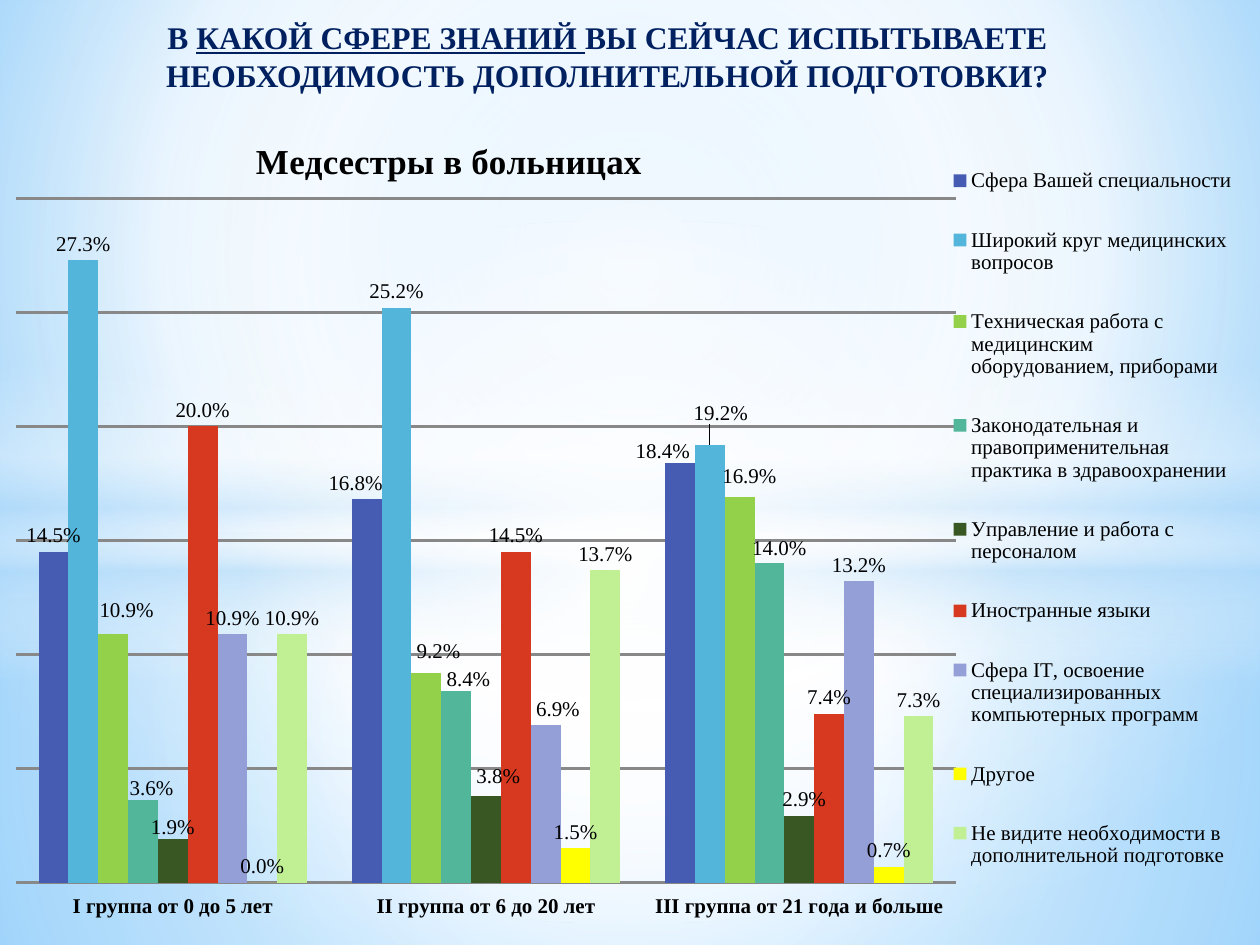
from dataclasses import dataclass, field

from lxml.etree import SubElement
from pptx import Presentation
from pptx.chart.data import CategoryChartData
from pptx.dml.color import RGBColor
from pptx.enum.chart import XL_CHART_TYPE as ChartType
from pptx.enum.chart import XL_LABEL_POSITION as LabelPos
from pptx.enum.chart import XL_LEGEND_POSITION as LegendPos
from pptx.enum.chart import XL_TICK_LABEL_POSITION as TickLabels
from pptx.enum.chart import XL_TICK_MARK as TickMark
from pptx.enum.shapes import MSO_SHAPE as Preset
from pptx.enum.text import MSO_ANCHOR as Anchor
from pptx.enum.text import MSO_AUTO_SIZE as AutoSize
from pptx.enum.text import PP_ALIGN as Align
from pptx.oxml import parse_xml
from pptx.oxml.ns import nsdecls, qn
from pptx.util import Cm, Pt

FONT = "Times New Roman"
PERCENT = "0.0%"
BLACK = RGBColor(0x00, 0x00, 0x00)
NAVY = RGBColor(0x00, 0x20, 0x60)
GRAY = RGBColor(0x88, 0x88, 0x88)
WHITE = RGBColor(0xFF, 0xFF, 0xFF)
PALE_BLUE = RGBColor(0xB4, 0xDC, 0xFA)
SKY = RGBColor(0x9E, 0xD5, 0xFF)
AZURE = RGBColor(0x5B, 0xB9, 0xFF)
INDIGO = RGBColor(0x45, 0x5C, 0xB2)
CYAN = RGBColor(0x52, 0xB5, 0xD9)
LIME = RGBColor(0x94, 0xD1, 0x4A)
TEAL = RGBColor(0x52, 0xB6, 0x9A)
FOREST = RGBColor(0x38, 0x57, 0x23)
RED = RGBColor(0xD7, 0x39, 0x20)
LAVENDER = RGBColor(0x94, 0x9E, 0xD7)
YELLOW = RGBColor(0xFF, 0xFF, 0x00)
LIGHT_LIME = RGBColor(0xC1, 0xF0, 0x94)


@dataclass
class Gradient:
    stops: list  # position %, colour, opacity %
    focus: tuple = (50, 50, 50, 50)  # left, top, right, bottom %
    linear: bool = False


@dataclass
class Glow:
    preset: Preset
    top: float
    height: float
    gradient: Gradient


@dataclass
class Field:
    name: str
    values: tuple
    color: RGBColor
    # category index -> label shift, in hundredths of the chart's size
    shifts: dict = field(default_factory=dict)


BACKDROP = Gradient([(0, SKY, 100), (60, WHITE, 100), (100, AZURE, 100)], (20, 10, 20, 60))
GLOWS = [
    Glow(Preset.RECTANGLE, 10.74, 8.31,
         Gradient([(0, WHITE, 91), (37, WHITE, 76), (100, PALE_BLUE, 79)])),
    Glow(Preset.RECTANGLE, 0, 10.74,
         Gradient([(0, WHITE, 89), (48, WHITE, 62), (100, PALE_BLUE, 79)])),
    Glow(Preset.RECTANGLE, 7.37, 6.35,
         Gradient([(0, WHITE, 0), (29, WHITE, 30), (45, PALE_BLUE, 40),
                   (55, WHITE, 26), (65, PALE_BLUE, 60), (100, WHITE, 0)], linear=True)),
    Glow(Preset.OVAL, 4.45, 14.17, Gradient([(0, WHITE, 100), (54, WHITE, 0)])),
]
GROUPS = ["I группа от 0 до 5 лет", "II группа от 6 до 20 лет",
          "III группа от 21 года и больше"]
FIELDS = [
    Field("Сфера Вашей специальности", (0.145, 0.168, 0.184), INDIGO,
          {1: (-0.9, 0), 2: (-1.4, 0.5)}),
    Field("Широкий круг медицинских вопросов", (0.273, 0.252, 0.192), CYAN,
          {2: (0.9, -1.9)}),
    Field("Техническая работа с медицинским оборудованием, приборами",
          (0.109, 0.092, 0.169), LIME, {0: (1.1, -0.9), 1: (1, -0.7), 2: (0.8, -0.6)}),
    Field("Законодательная и правоприменительная практика в здравоохранении",
          (0.036, 0.084, 0.14), TEAL, {0: (0.7, 0.5), 1: (1, 0.5), 2: (0.8, 0.2)}),
    Field("Управление и работа с персоналом", (0.019, 0.038, 0.029), FOREST,
          {0: (0, 0.5), 1: (1, -0.4), 2: (0.4, -0.1)}),
    Field("Иностранные языки", (0.2, 0.145, 0.074), RED),
    Field("Сфера IT, освоение специализированных компьютерных программ",
          (0.109, 0.069, 0.132), LAVENDER, {1: (1, 0)}),
    Field("Другое", (0, 0.015, 0.007), YELLOW),
    Field("Не видите необходимости в дополнительной подготовке",
          (0.109, 0.137, 0.073), LIGHT_LIME),
]
QUESTION = [("В ", False), ("КАКОЙ СФЕРЕ ЗНАНИЙ ", True),
            ("ВЫ СЕЙЧАС ИСПЫТЫВАЕТЕ НЕОБХОДИМОСТЬ ДОПОЛНИТЕЛЬНОЙ ПОДГОТОВКИ?", False)]


def apply(target, formats: dict) -> None:
    for name, value in formats.items():
        setattr(target, name, value)


def set_font(font, size: int, color: RGBColor, bold: bool) -> None:
    apply(font, {"name": FONT, "size": Pt(size), "bold": bold})
    font.color.rgb = color


def paint_gradient(fill, owner, gradient: Gradient) -> None:
    fill.gradient()
    stops = "".join(
        f'<a:gs pos="{pos * 1000}"><a:srgbClr val="{color}">'
        f'<a:alpha val="{opacity * 1000}"/></a:srgbClr></a:gs>'
        for pos, color, opacity in gradient.stops)
    sides = " ".join(f'{side}="{share * 1000}"' for side, share in zip("ltrb", gradient.focus))
    course = ('<a:lin ang="5400000" scaled="0"/>' if gradient.linear else
              f'<a:path path="circle"><a:fillToRect {sides}/></a:path>')
    plain = owner.xpath(".//a:gradFill")[0]
    plain.getparent().replace(plain, parse_xml(
        f'<a:gradFill {nsdecls("a")} rotWithShape="1"><a:gsLst>{stops}</a:gsLst>'
        f'{course}</a:gradFill>'))


def add_glow(slide, glow: Glow) -> None:
    shape = slide.shapes.add_shape(glow.preset, 0, Cm(glow.top), Cm(25.4), Cm(glow.height))
    shape.shadow.inherit = False
    shape.line.fill.background()
    paint_gradient(shape.fill, shape._element, glow.gradient)


def set_layout(part, index: int, **settings) -> None:
    """Give a chart part a manual layout as its child at the given index."""
    for old in part.findall(qn("c:layout")):
        part.remove(old)
    layout = parse_xml(f'<c:layout {nsdecls("c")}><c:manualLayout/></c:layout>')
    for name, value in settings.items():
        SubElement(layout[0], qn(f"c:{name}")).set("val", str(value))
    part.insert(index, layout)


def format_series(series, item: Field) -> None:
    series.format.fill.solid()
    series.format.fill.fore_color.rgb = item.color
    series.invert_if_negative = False
    apply(series.data_labels, {"show_value": True, "number_format": PERCENT,
                               "number_format_is_linked": False,
                               "position": LabelPos.OUTSIDE_END})
    for index, (dx, dy) in item.shifts.items():
        series.points[index].data_label.position = LabelPos.OUTSIDE_END
        label = series._element.xpath(f'.//c:dLbl[c:idx/@val="{index}"]')[0]
        set_layout(label, 1, x=round(dx / 100, 3), y=round(dy / 100, 3))


def add_survey_chart(slide) -> None:
    data = CategoryChartData(number_format=PERCENT)
    data.categories = GROUPS
    for item in FIELDS:
        data.add_series(item.name, item.values)
    chart = slide.shapes.add_chart(ChartType.COLUMN_CLUSTERED, Cm(0.3), Cm(2.18),
                                   Cm(24.79), Cm(16.54), data).chart
    set_font(chart.font, 12, BLACK, False)

    # Title
    heading = chart.chart_title.text_frame
    heading.text = "Медсестры в больницах"
    set_font(heading.paragraphs[0].runs[0].font, 20, BLACK, True)
    set_layout(chart.chart_title._element, 1, xMode="edge", yMode="edge", x=0.19, y=0.03)

    # Columns
    plot = chart.plots[0]
    apply(plot, {"gap_width": 150, "overlap": 0, "vary_by_categories": False})
    for series, item in zip(plot.series, FIELDS):
        format_series(series, item)
    set_layout(chart._chartSpace.chart.plotArea, 0, layoutTarget="inner", xMode="edge",
               yMode="edge", x=0, y=0.11, w=0.765, h=0.834)

    # Axes
    apply(chart.value_axis, {"minimum_scale": 0, "maximum_scale": 0.3, "major_unit": 0.05,
                             "has_major_gridlines": True, "visible": False})
    groups_axis = chart.category_axis
    apply(groups_axis, {"major_tick_mark": TickMark.NONE, "minor_tick_mark": TickMark.NONE,
                        "tick_label_position": TickLabels.LOW})
    set_font(groups_axis.tick_labels.font, 12, BLACK, True)
    for line, width in ((chart.value_axis.major_gridlines.format.line, 1.5),
                        (groups_axis.format.line, 0.75)):
        line.color.rgb = GRAY
        line.width = Pt(width)

    # Legend
    chart.has_legend = True
    apply(chart.legend, {"position": LegendPos.RIGHT, "include_in_layout": False})
    set_font(chart.legend.font, 12, BLACK, False)
    set_layout(chart.legend._element, 1, xMode="edge", yMode="edge",
               x=0.765, y=0.03, w=0.23, h=0.94)


def add_question(slide) -> None:
    title = slide.shapes.title
    apply(title, {"left": Cm(1.5), "top": Cm(0.23), "width": Cm(21.49), "height": Cm(1.8)})
    apply(title.text_frame, {"word_wrap": True, "auto_size": AutoSize.NONE,
                             "vertical_anchor": Anchor.TOP})
    paragraph = title.text_frame.paragraphs[0]
    paragraph.alignment = Align.CENTER
    for text, underlined in QUESTION:
        run = paragraph.add_run()
        run.text = text
        set_font(run.font, 18, NAVY, True)
        run.font.underline = underlined
    slide.shapes._spTree.append(title._element)  # bring in front of the glows


def main() -> None:
    deck = Presentation()
    apply(deck, {"slide_width": Cm(25.4), "slide_height": Cm(19.05)})
    slide = deck.slides.add_slide(deck.slide_layouts.get_by_name("Title Only"))
    paint_gradient(slide.background.fill, slide._element, BACKDROP)
    for glow in GLOWS:
        add_glow(slide, glow)
    add_survey_chart(slide)
    add_question(slide)
    deck.save("out.pptx")


if __name__ == "__main__":
    main()
